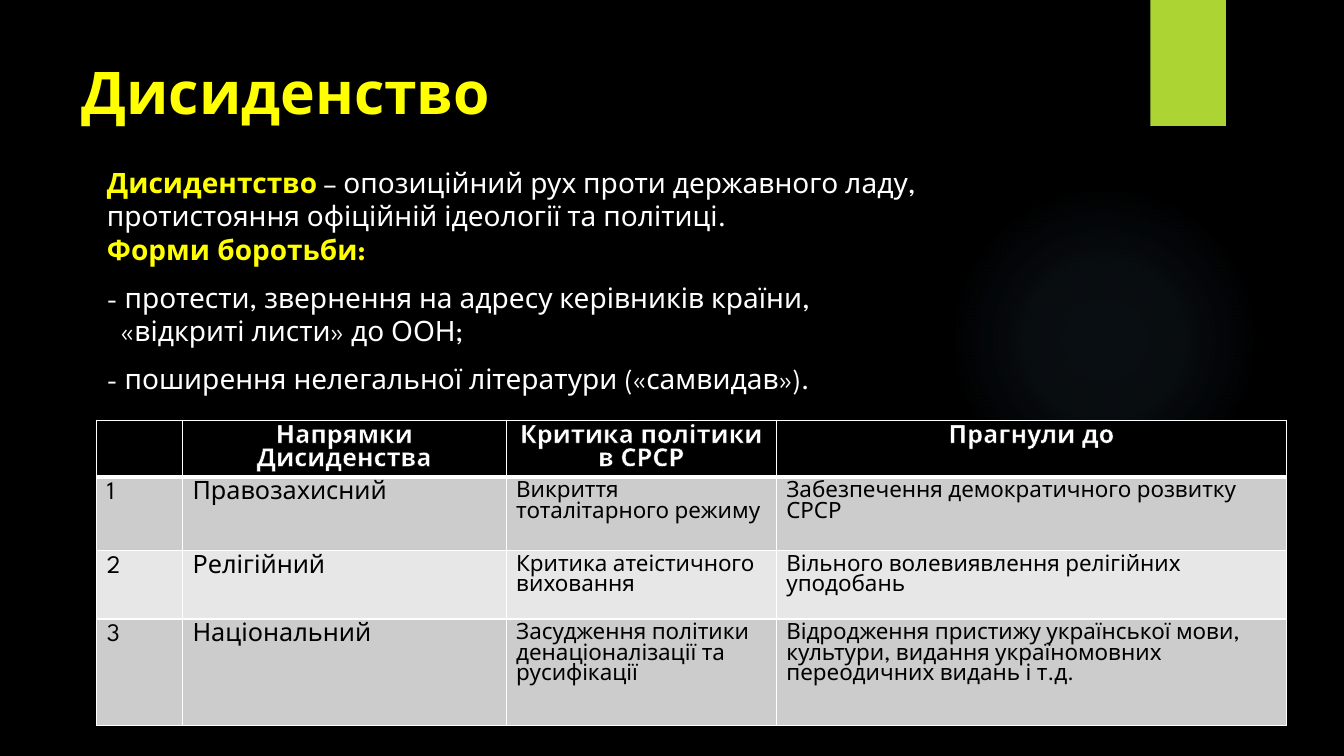
from dataclasses import dataclass

from lxml import etree
from pptx import Presentation
from pptx.dml.color import RGBColor
from pptx.enum import shapes, text
from pptx.oxml import ns, parse_xml
from pptx.util import Inches, Pt


@dataclass(frozen=True)
class Theme:
    font: str = "League Spartan"
    black: str = "000000"
    white: str = "FFFFFF"
    yellow: str = "FFFF00"
    green: str = "ACD433"
    glow: str = "7AC4F0"
    bands: tuple = ("CCCCCC", "E7E7E7")
    title_size: int = 42
    body_size: int = 20
    table_size: int = 18
    detail_size: int = 16


THEME = Theme()
NAMESPACE = ns.nsdecls("a")
BREAK = "\n"

TITLE = "Дисиденство"
# Each paragraph: hanging indent in inches, then (text, is key term) runs
BODY = [
    (0, [("Дисидентство", True),
         (" – опозиційний рух проти державного ладу, протистояння офіційній "
          "ідеології та політиці.", False),
         (BREAK, False), ("Форми боротьби:", True)]),
    (0.14, [("- протести, звернення на адресу керівників країни,", False),
            (BREAK, False), ("«відкриті листи» до ООН;", False)]),
    (0.14, [("- поширення нелегальної літератури («самвидав»).", False)]),
]
COLUMN_WIDTHS = [0.85, 3.21, 2.68, 5.06]
ROW_HEIGHTS = [0.56, 0.73, 0.68, 1.06]
TABLE = [
    ["", "Напрямки Дисиденства", "Критика політики в СРСР", "Прагнули до"],
    ["1", "Правозахисний", "Викриття тоталітарного режиму",
     "Забезпечення демократичного розвитку СРСР"],
    ["2", "Релігійний", "Критика атеістичного виховання",
     "Вільного волевиявлення релігійних уподобань"],
    ["3", "Національний", "Засудження політики денаціоналізації та русифікації",
     "Відродження пристижу української мови, культури, видання "
     "україномовних переодичних видань і т.д."],
]


def set_all(target, values):
    for name, value in values.items():
        setattr(target, name, value)


def style_font(font, size, color, bold=False):
    set_all(font, {"name": THEME.font, "size": Pt(size), "bold": bold})
    font.color.rgb = RGBColor.from_string(color)


def place(shape, box):
    names = ("left", "top", "width", "height")
    set_all(shape, dict(zip(names, map(Inches, box))))


def add_decoration(slide, kind, box, color):
    """Add a plain shape behind the text."""
    shape = slide.shapes.add_shape(kind, *map(Inches, box))
    shape.shadow.inherit = False
    shape.line.fill.background()
    shape.fill.solid()
    shape.fill.fore_color.rgb = RGBColor.from_string(color)
    slide.shapes._spTree.insert(2, shape._element)
    return shape


def add_glow(slide, box):
    shape = add_decoration(slide, shapes.MSO_SHAPE.OVAL, box, THEME.glow)
    stops = "".join(
        f'<a:gs pos="{position * 1000}"><a:srgbClr val="{THEME.glow}">'
        f'<a:alpha val="{alpha * 1000}"/></a:srgbClr></a:gs>'
        for position, alpha in ((0, 7), (36, 6), (69, 0)))
    gradient = parse_xml(
        f'<a:gradFill {NAMESPACE} rotWithShape="1"><a:gsLst>{stops}</a:gsLst>'
        '<a:path path="circle"><a:fillToRect l="50000" t="50000" r="50000" '
        'b="50000"/></a:path></a:gradFill>')
    solid = shape._element.spPr.find(ns.qn("a:solidFill"))
    solid.getparent().replace(solid, gradient)


def fill_title(slide, box):
    title = slide.shapes.title
    place(title, box)
    title.text = TITLE
    set_all(title.text_frame, {"vertical_anchor": text.MSO_ANCHOR.TOP,
                               "auto_size": text.MSO_AUTO_SIZE.NONE,
                               "word_wrap": True})
    paragraph = title.text_frame.paragraphs[0]
    paragraph.alignment = text.PP_ALIGN.LEFT
    style_font(paragraph.runs[0].font, THEME.title_size, THEME.yellow, True)


def fill_body(slide, box):
    body = slide.placeholders[1]
    place(body, box)
    frame = body.text_frame
    set_all(frame, {"vertical_anchor": text.MSO_ANCHOR.TOP,
                    "auto_size": text.MSO_AUTO_SIZE.NONE, "word_wrap": True})
    for index, (hanging, runs) in enumerate(BODY):
        paragraph = frame.add_paragraph() if index else frame.paragraphs[0]
        properties = paragraph._p.get_or_add_pPr()
        properties.set("marL", str(Inches(hanging)))
        properties.set("indent", str(-Inches(hanging)))
        etree.SubElement(properties, ns.qn("a:buNone"))
        set_all(paragraph, {"line_spacing": 1.0,
                            "space_before": Pt(10 if index else 0)})
        for words, is_key in runs:
            if words == BREAK:
                paragraph.add_line_break()
                continue
            run = paragraph.add_run()
            run.text = words
            style_font(run.font, THEME.body_size,
                       THEME.yellow if is_key else THEME.white, is_key)


def set_borders(cell, bottom_width):
    properties = cell._tc.get_or_add_tcPr()
    widths = {"lnL": 1, "lnR": 1, "lnT": 1, "lnB": bottom_width}
    for index, (side, width) in enumerate(widths.items()):
        properties.insert(index, parse_xml(
            f'<a:{side} {NAMESPACE} w="{Pt(width)}"><a:solidFill>'
            f'<a:srgbClr val="{THEME.white}"/></a:solidFill></a:{side}>'))


def outline_header(run):
    run._r.get_or_add_rPr().insert(0, parse_xml(
        f'<a:ln {NAMESPACE} w="{Pt(0.75)}"><a:solidFill>'
        f'<a:srgbClr val="{THEME.black}"/></a:solidFill></a:ln>'))


def fill_cell(cell, words, row, column):
    is_header = row == 0
    is_detail = not is_header and column >= 2
    fill = THEME.black if is_header else THEME.bands[(row - 1) % 2]
    cell.fill.solid()
    cell.fill.fore_color.rgb = RGBColor.from_string(fill)
    set_borders(cell, 3 if is_header else 1)
    paragraph = cell.text_frame.paragraphs[0]
    size = THEME.detail_size if is_detail else THEME.table_size
    if not words:
        paragraph.font.size = Pt(size)
        return
    run = paragraph.add_run()
    run.text = words
    style_font(run.font, size, THEME.white if is_header else THEME.black, is_header)
    if is_header:
        paragraph.alignment = text.PP_ALIGN.CENTER
        outline_header(run)


def add_directions_table(slide, left, top):
    box = (left, top, sum(COLUMN_WIDTHS), sum(ROW_HEIGHTS))
    table = slide.shapes.add_table(len(TABLE), len(COLUMN_WIDTHS),
                                   *map(Inches, box)).table
    table.horz_banding = False
    for column, width in zip(table.columns, COLUMN_WIDTHS):
        column.width = Inches(width)
    for row, height in zip(table.rows, ROW_HEIGHTS):
        row.height = Inches(height)
    for row, values in enumerate(TABLE):
        for column, words in enumerate(values):
            fill_cell(table.cell(row, column), words, row, column)


def build_slide(presentation):
    slide = presentation.slides.add_slide(presentation.slide_layouts[1])
    slide.background.fill.solid()
    slide.background.fill.fore_color.rgb = RGBColor.from_string(THEME.black)
    # Background accents
    add_decoration(slide, shapes.MSO_SHAPE.RECTANGLE,
                   (11.41, 0, 0.75, 1.25), THEME.green)
    add_glow(slide, (9.41, 1.83, 3.08, 3.08))
    # Content
    fill_title(slide, (0.71, 0.5, 10.29, 1.53))
    fill_body(slide, (0.96, 1.59, 9.78, 4.59))
    add_directions_table(slide, 0.96, 4.17)


def main():
    presentation = Presentation()
    set_all(presentation, {"slide_width": Inches(13.33),
                           "slide_height": Inches(7.5)})
    build_slide(presentation)
    presentation.save("out.pptx")


if __name__ == "__main__":
    main()
